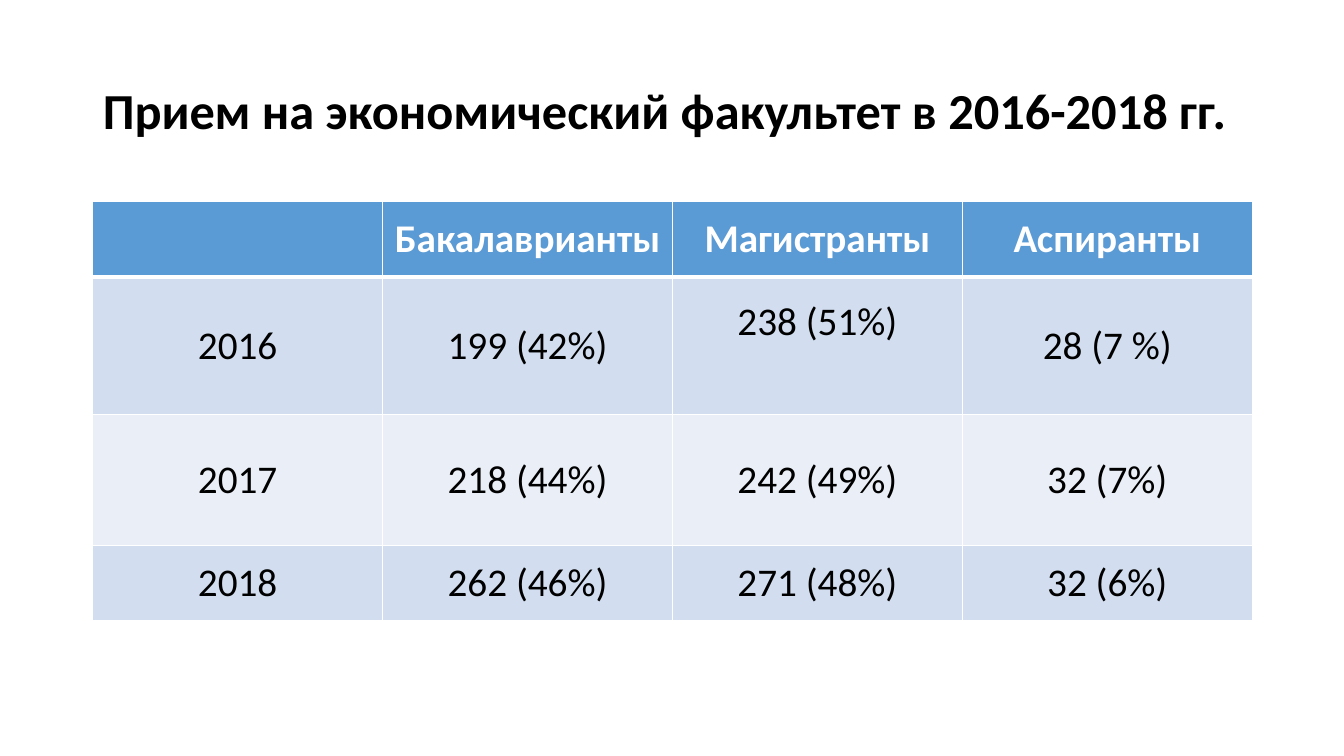
"""Build a slide with a table of faculty admissions by year."""
from dataclasses import dataclass

from lxml import etree
from pptx import Presentation
from pptx.dml.color import RGBColor
from pptx.enum.text import MSO_ANCHOR, PP_ALIGN
from pptx.oxml.ns import qn
from pptx.util import Inches, Pt

MIDDLE = MSO_ANCHOR.MIDDLE
LEFT, CENTER = PP_ALIGN.LEFT, PP_ALIGN.CENTER

TITLE = "Прием на экономический факультет в 2016-2018 гг."
ROWS = [
    ("", "Бакалаврианты", "Магистранты", "Аспиранты"),
    ("2016", "199 (42%)", "238 (51%)", "28 (7 %)"),
    ("2017", "218 (44%)", "242 (49%)", "32 (7%)"),
    ("2018", "262 (46%)", "271 (48%)", "32 (6%)"),
]
HEIGHTS = (0.75, 1.36, 1.3, 0.75)
RAISED = (1, 2)
WIDE, HIGH = 13.33, 7.5
EDGE = 0.92
SPAN = 11.5


@dataclass(frozen=True)
class Theme:
    font: str = "Calibri"
    head: str = "5B9BD5"
    bands: tuple = ("EAEFF7", "D2DEEF")
    ink: str = "000000"
    white: str = "FFFFFF"
    title: int = 36
    body: int = 28


THEME = Theme()


def style(para, size, color, bold, align):
    """Format a paragraph."""
    para.alignment = align
    font = para.font
    font.name, font.size, font.bold = THEME.font, Pt(size), bold
    font.color.rgb = RGBColor.from_string(color)


def border(cell, widths):
    """Draw white lines on the left, right, top and bottom of a cell."""
    props = cell._tc.get_or_add_tcPr()
    for spot, (side, width) in enumerate(zip("LRTB", widths)):
        line = etree.Element(qn(f"a:ln{side}"), w=str(Pt(width)))
        fill = etree.SubElement(line, qn("a:solidFill"))
        etree.SubElement(fill, qn("a:srgbClr"), val=THEME.white)
        props.insert(spot, line)


def add_title(slide):
    """Place and format the title."""
    title = slide.shapes.title
    title.left, title.top = Inches(EDGE), Inches(0.4)
    title.width, title.height = Inches(SPAN), Inches(1.45)
    frame = title.text_frame
    frame.text = TITLE
    frame.vertical_anchor = MIDDLE
    para = frame.paragraphs[0]
    para.line_spacing = 0.9
    style(para, THEME.title, THEME.ink, True, LEFT)


def add_grid(slide):
    """Add the table of admissions."""
    table = slide.shapes.add_table(
        len(ROWS), len(ROWS[0]), Inches(EDGE), Inches(2),
        Inches(SPAN), Inches(sum(HEIGHTS))).table
    for r, (row, high) in enumerate(zip(ROWS, HEIGHTS)):
        table.rows[r].height = Inches(high)
        head = r == 0
        for c, text in enumerate(row):
            cell = table.cell(r, c)
            cell.text = text
            cell.vertical_anchor = MIDDLE
            cell.fill.solid()
            shade = THEME.head if head else THEME.bands[r % 2]
            cell.fill.fore_color.rgb = RGBColor.from_string(shade)
            color = THEME.white if head else THEME.ink
            style(cell.text_frame.paragraphs[0], THEME.body, color, head, CENTER)
            border(cell, (1, 1, 3 if r == 1 else 1, 3 if head else 1))
    table.cell(*RAISED).margin_bottom = Inches(0.52)


def main():
    """Build and save the slide."""
    deck = Presentation()
    deck.slide_width, deck.slide_height = Inches(WIDE), Inches(HIGH)
    slide = deck.slides.add_slide(deck.slide_layouts[5])
    add_title(slide)
    add_grid(slide)
    deck.save("out.pptx")


if __name__ == "__main__":
    main()
